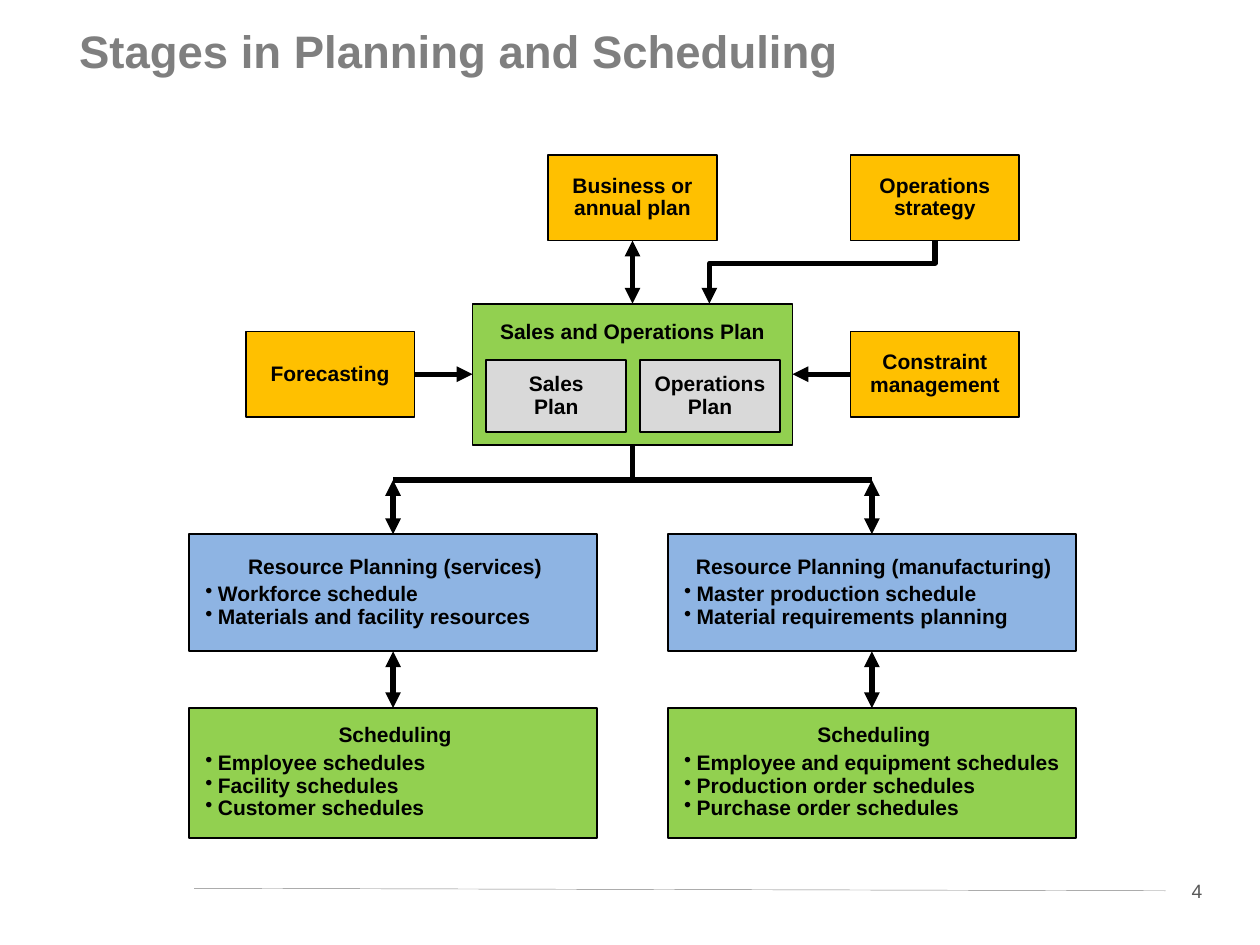
from collections import namedtuple

from lxml import etree
from pptx import Presentation
from pptx import util as u
from pptx.dml.color import RGBColor
from pptx.enum import shapes, text
from pptx.oxml.ns import qn

Box = namedtuple("Box", "left top width height")

COLOURS = {
    "ink": "000000", "title": "7F7F7F", "number": "595959", "rule": "808080",
    "input": "FFC000", "plan": "92D050", "part": "D9D9D9", "resource": "8EB4E3",
}
FONT = "Arial"
TOP, LEFT, BOTTOM, RIGHT = range(4)
CENTER = text.PP_ALIGN.CENTER
INPUT_SIZE = (1.34, 0.68)
COLUMN_WIDTH = 3.24


def colour(name):
    return RGBColor.from_string(COLOURS[name])


def inches(box):
    return [u.Inches(value) for value in box]


def set_insets(frame, left, top, right, bottom):
    frame.margin_left, frame.margin_top = u.Inches(left), u.Inches(top)
    frame.margin_right, frame.margin_bottom = u.Inches(right), u.Inches(bottom)


def add_span(para, words, size=12, ink="ink", bold=True):
    span = para.add_run()
    span.text = words
    span.font.name, span.font.size, span.font.bold = FONT, u.Pt(size), bold
    span.font.color.rgb = colour(ink)


def add_panel(page, box, fill):
    panel = page.shapes.add_shape(shapes.MSO_SHAPE.RECTANGLE, *inches(box))
    panel.shadow.inherit = False
    panel.fill.solid()
    panel.fill.fore_color.rgb = colour(fill)
    panel.line.color.rgb = colour("ink")
    panel.line.width = u.Pt(1)
    panel.text_frame.word_wrap = True
    return panel


def add_label_panel(page, box, fill, lines):
    """Panel with one centred paragraph for each line."""
    panel = add_panel(page, box, fill)
    frame = panel.text_frame
    set_insets(frame, 0, 0, 0, 0)
    frame.vertical_anchor = text.MSO_ANCHOR.MIDDLE
    for index, line in enumerate(lines):
        para = frame.add_paragraph() if index else frame.paragraphs[0]
        para.alignment, para.line_spacing = CENTER, 0.9
        add_span(para, line)
    return panel


def add_list_panel(page, box, fill, heading, items, top_inset):
    """Panel with a centred heading above a bulleted list."""
    panel = add_panel(page, box, fill)
    frame = panel.text_frame
    set_insets(frame, 0.13, top_inset, 0.1, 0.05)
    frame.vertical_anchor = text.MSO_ANCHOR.TOP
    frame.paragraphs[0].alignment = CENTER
    add_span(frame.paragraphs[0], heading)
    for index, item in enumerate(items):
        para = frame.add_paragraph()
        para.alignment, para.line_spacing = text.PP_ALIGN.LEFT, 0.9
        para.space_before = u.Pt(0 if index else 3)
        props = para._p.get_or_add_pPr()
        props.set("marL", str(u.Inches(0.1)))
        props.set("indent", str(u.Inches(-0.1)))
        etree.SubElement(props, qn("a:buChar")).set("char", "•")
        add_span(para, item)
    return panel


def style_line(line, heads=()):
    line.color.rgb = colour("ink")
    line.width = u.Pt(3)
    for head in heads:
        etree.SubElement(line._get_or_add_ln(), qn(f"a:{head}")).set("type", "triangle")


def add_straight(page, start, end):
    line = page.shapes.add_connector(
        shapes.MSO_CONNECTOR.STRAIGHT, *inches(start), *inches(end))
    return line


def link(page, start, end, heads=(), joins=(None, None)):
    """Heavy line between two points; joins holds (shape, side) for either end."""
    line = add_straight(page, start, end)
    style_line(line.line, heads)
    etree.SubElement(line._element.spPr, qn("a:effectLst"))
    if joins[0]:
        line.begin_connect(*joins[0])
    if joins[1]:
        line.end_connect(*joins[1])


def add_title(page, box):
    frame = page.shapes.add_textbox(*inches(box)).text_frame
    frame.word_wrap = True
    add_span(frame.paragraphs[0], "Stages in Planning and Scheduling", 26, "title")


def add_footer(page, box):
    number_width = 0.5
    rule_right = box.left + box.width - number_width
    rule = add_straight(page, (box.left, box.top + 0.12), (rule_right, box.top + 0.14))
    rule.line.color.rgb = colour("rule")
    rule.line.width = u.Pt(0.25)
    etree.SubElement(rule._element.spPr, qn("a:effectLst"))
    number = page.shapes.add_textbox(*inches((rule_right, box.top, number_width, box.height)))
    number.text_frame.word_wrap = True
    para = number.text_frame.paragraphs[0]
    para.alignment = CENTER
    add_span(para, "4", 11, "number", False)


def add_sales_operations(page, box):
    panel = add_panel(page, box, "plan")
    frame = panel.text_frame
    set_insets(frame, 0, 0.14, 0, 0)
    frame.vertical_anchor = text.MSO_ANCHOR.TOP
    frame.paragraphs[0].alignment = CENTER
    frame.paragraphs[0].line_spacing = 0.9
    add_span(frame.paragraphs[0], "Sales and Operations Plan")
    for index, name in enumerate(("Sales", "Operations")):
        part = Box(box.left + 0.11 + index * 1.22, box.top + 0.45, 1.11, 0.57)
        add_label_panel(page, part, "part", (name, "Plan"))
    return panel


def add_inputs(page, box, plan, plan_box):
    """Four inputs laid out around the sales and operations plan."""
    middle, right = box.left + 2.4, box.left + 4.8
    lower = box.top + 1.4
    width, height = INPUT_SIZE

    def add_input(left, top, *lines):
        return add_label_panel(page, Box(left, top, width, height), "input", lines)

    business = add_input(middle, box.top, "Business or", "annual plan")
    add_input(right, box.top, "Operations", "strategy")
    forecast = add_input(box.left, lower, "Forecasting")
    constraint = add_input(right, lower, "Constraint", "management")

    center, side = middle + width / 2, lower + height / 2
    bottom = box.top + height
    link(page, (center, bottom), (center, plan_box.top), ("headEnd", "tailEnd"),
         ((business, BOTTOM), (plan, TOP)))
    link(page, (box.left + width, side), (plan_box.left, side), ("tailEnd",),
         ((forecast, RIGHT), (plan, LEFT)))
    link(page, (right, side), (plan_box.left + plan_box.width, side), ("tailEnd",),
         ((constraint, LEFT), (plan, RIGHT)))

    start, end, bend = right + width / 2, plan_box.left + 1.88, bottom + 0.18
    points = [(start, bottom), (start, bend), (end, bend), (end, plan_box.top)]
    outline = page.shapes.build_freeform(*inches(points[0]))
    outline.add_line_segments([inches(point) for point in points[1:]], close=False)
    elbow = outline.convert_to_shape()
    elbow.shadow.inherit = False
    elbow.fill.background()
    style_line(elbow.line, ("tailEnd",))


def add_column(page, box, rail, kind, resources, schedules):
    """Resource planning above scheduling, hung from the rail."""
    center, both = box.left + box.width / 2, ("headEnd", "tailEnd")
    upper = Box(box.left, box.top, box.width, 0.93)
    lower = Box(box.left, box.top + 1.38, box.width, 1.03)
    resource = add_list_panel(page, upper, "resource", f"Resource Planning ({kind})",
                              resources, 0.15)
    schedule = add_list_panel(page, lower, "plan", "Scheduling", schedules, 0.11)
    link(page, (center, rail), (center, upper.top), both, (None, (resource, TOP)))
    link(page, (center, upper.top + upper.height), (center, lower.top), both,
         ((resource, BOTTOM), (schedule, TOP)))
    return center


def main():
    deck = Presentation()
    deck.slide_width, deck.slide_height = u.Inches(10), u.Inches(7.5)
    page = deck.slides.add_slide(deck.slide_layouts[6])

    add_footer(page, Box(1.54, 6.93, 8.21, 0.29))
    add_title(page, Box(0.53, 0.13, 8.94, 1.01))

    plan_box = Box(3.75, 2.41, 2.54, 1.12)
    plan = add_sales_operations(page, plan_box)
    add_inputs(page, Box(1.95, 1.23, 6.14, 2.08), plan, plan_box)

    rail = 3.81
    columns = [
        (1.5, "services", ("Workforce schedule", "Materials and facility resources"),
         ("Employee schedules", "Facility schedules", "Customer schedules")),
        (5.3, "manufacturing", ("Master production schedule", "Material requirements planning"),
         ("Employee and equipment schedules", "Production order schedules",
          "Purchase order schedules")),
    ]
    centers = [add_column(page, Box(left, 4.24, COLUMN_WIDTH, 2.41), rail, *content)
               for left, *content in columns]
    link(page, (centers[0], rail), (centers[1], rail))
    middle = plan_box.left + plan_box.width / 2
    link(page, (middle, plan_box.top + plan_box.height), (middle, rail),
         joins=((plan, BOTTOM), None))

    deck.save("out.pptx")


if __name__ == "__main__":
    main()
